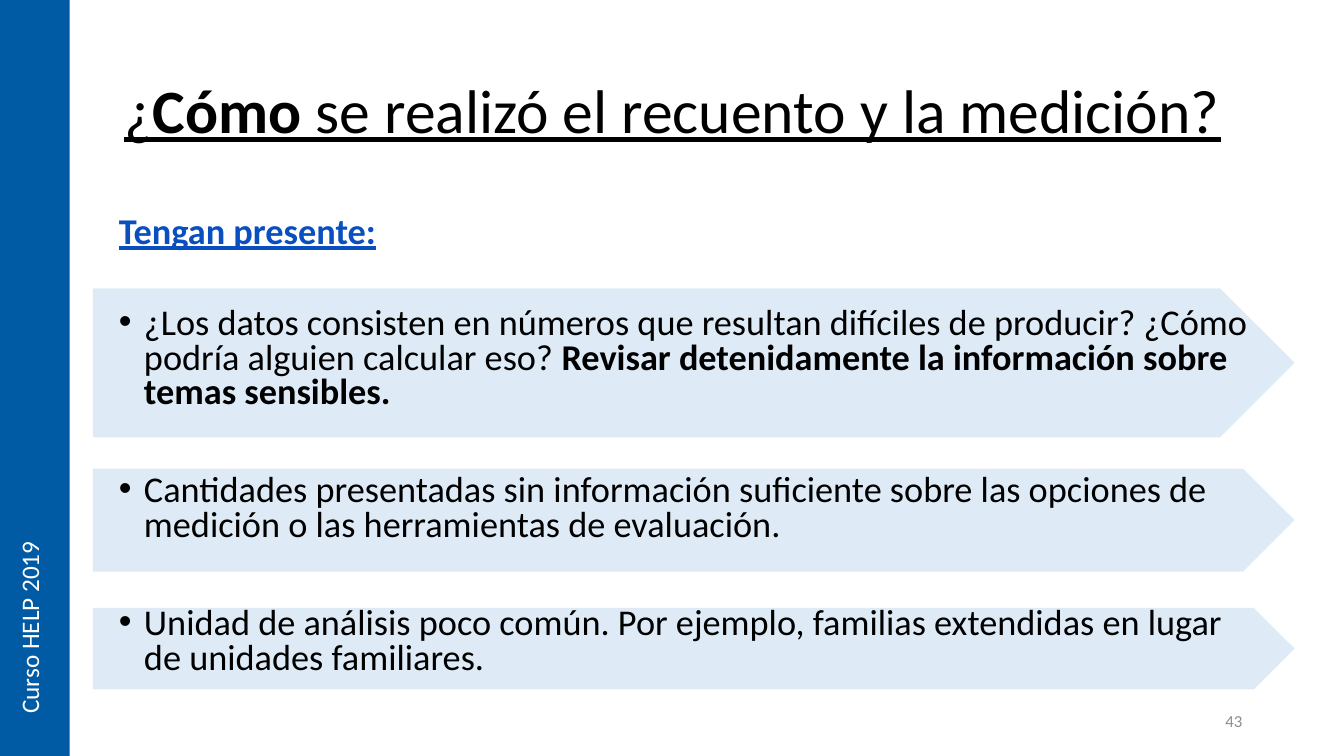
from dataclasses import dataclass

from lxml.etree import SubElement
from pptx import Presentation
from pptx.dml.color import RGBColor
from pptx.enum.shapes import MSO_SHAPE
from pptx.enum.text import MSO_ANCHOR, PP_ALIGN
from pptx.oxml.ns import qn
from pptx.util import Inches, Pt


@dataclass(frozen=True)
class Theme:
    font: str = "Calibri"
    ink: str = "000000"
    accent: str = "0A4FC0"
    band: str = "005BA4"
    arrow: str = "DEEBF7"
    muted: str = "8C8C8C"
    white: str = "FFFFFF"
    title_size: float = 44
    body_size: float = 25.9
    label_size: float = 18
    number_size: float = 12


class SlideBuilder:
    def __init__(self, page, theme):
        self.page = page
        self.theme = theme

    def shape(self, preset, left, top, width, height, color):
        shape = self.page.shapes.add_shape(
            preset, Inches(left), Inches(top), Inches(width), Inches(height))
        shape.shadow.inherit = False
        shape.fill.solid()
        shape.fill.fore_color.rgb = RGBColor.from_string(color)
        shape.line.fill.background()

    def box(self, left, top, width, height, anchor=MSO_ANCHOR.TOP, wrap=True):
        box = self.page.shapes.add_textbox(
            Inches(left), Inches(top), Inches(width), Inches(height))
        frame = box.text_frame
        frame.word_wrap = wrap
        frame.vertical_anchor = anchor
        return frame

    def fill_text(self, paragraph, spans, size, color, align=PP_ALIGN.LEFT,
                  spacing=1.0, before=0, underline=False):
        """Fill a paragraph with (text, bold) spans."""
        paragraph.alignment = align
        paragraph.line_spacing = spacing
        paragraph.space_before = Pt(before)
        font = paragraph.font
        font.name = self.theme.font
        font.size = Pt(size)
        font.color.rgb = RGBColor.from_string(color)
        font.underline = underline
        for text, bold in spans:
            span = paragraph.add_run()
            span.text = text
            span.font.bold = bold

    def bullet(self, frame, spans, before):
        paragraph = frame.add_paragraph()
        properties = paragraph._p.get_or_add_pPr()
        properties.set("marL", str(Inches(0.25)))
        properties.set("indent", str(-Inches(0.25)))
        SubElement(properties, qn("a:buFont")).set("typeface", "Arial")
        SubElement(properties, qn("a:buChar")).set("char", "•")
        self.fill_text(paragraph, spans, self.theme.body_size, self.theme.ink,
                       spacing=0.8, before=before)


def main():
    deck = Presentation()
    deck.slide_width, deck.slide_height = Inches(13.33), Inches(7.5)
    theme = Theme()
    slide = SlideBuilder(deck.slides.add_slide(deck.slide_layouts[6]), theme)

    # Arrows behind the three points
    for top, height in ((2.86, 1.48), (4.65, 1.02), (6.03, 0.81)):
        slide.shape(MSO_SHAPE.PENTAGON, 0.92, top, 11.92, height, theme.arrow)

    # Title
    title = slide.box(0.92, 0.4, 11.5, 1.45, MSO_ANCHOR.MIDDLE)
    slide.fill_text(title.paragraphs[0],
                    [("¿", False), ("Cómo", True),
                     (" se realizó el recuento y la medición?", False)],
                    theme.title_size, theme.ink, PP_ALIGN.CENTER, 0.9,
                    underline=True)

    # Heading and points
    body = slide.box(1.08, 2.1, 11.5, 4.74)
    slide.fill_text(body.paragraphs[0], [("Tengan presente:", True)],
                    theme.body_size, theme.accent, spacing=0.8, underline=True)
    points = (
        (40, [("¿Los datos consisten en números que resultan difíciles de "
               "producir? ¿Cómo podría alguien calcular eso? ", False),
              ("Revisar detenidamente la información sobre temas sensibles.",
               True)]),
        (45, [("Cantidades presentadas sin información suficiente sobre las "
               "opciones de medición o las herramientas de evaluación.",
               False)]),
        (45, [("Unidad de análisis poco común. Por ejemplo, familias "
               "extendidas en lugar de unidades familiares.", False)]),
    )
    for before, spans in points:
        slide.bullet(body, spans, before)

    # Page number
    number = slide.box(9.42, 6.95, 3, 0.4, MSO_ANCHOR.MIDDLE)
    slide.fill_text(number.paragraphs[0], [("43", False)], theme.number_size,
                    theme.muted, PP_ALIGN.RIGHT)

    # Side band with the course name
    slide.shape(MSO_SHAPE.RECTANGLE, 0, 0, 0.69, 7.5, theme.band)
    course = slide.box(0.09, 5.04, 0.5, 2.14, wrap=False)
    course._txBody.bodyPr.set("vert", "vert270")
    slide.fill_text(course.paragraphs[0], [("Curso HELP 2019", False)],
                    theme.label_size, theme.white)

    deck.save("out.pptx")


if __name__ == "__main__":
    main()
